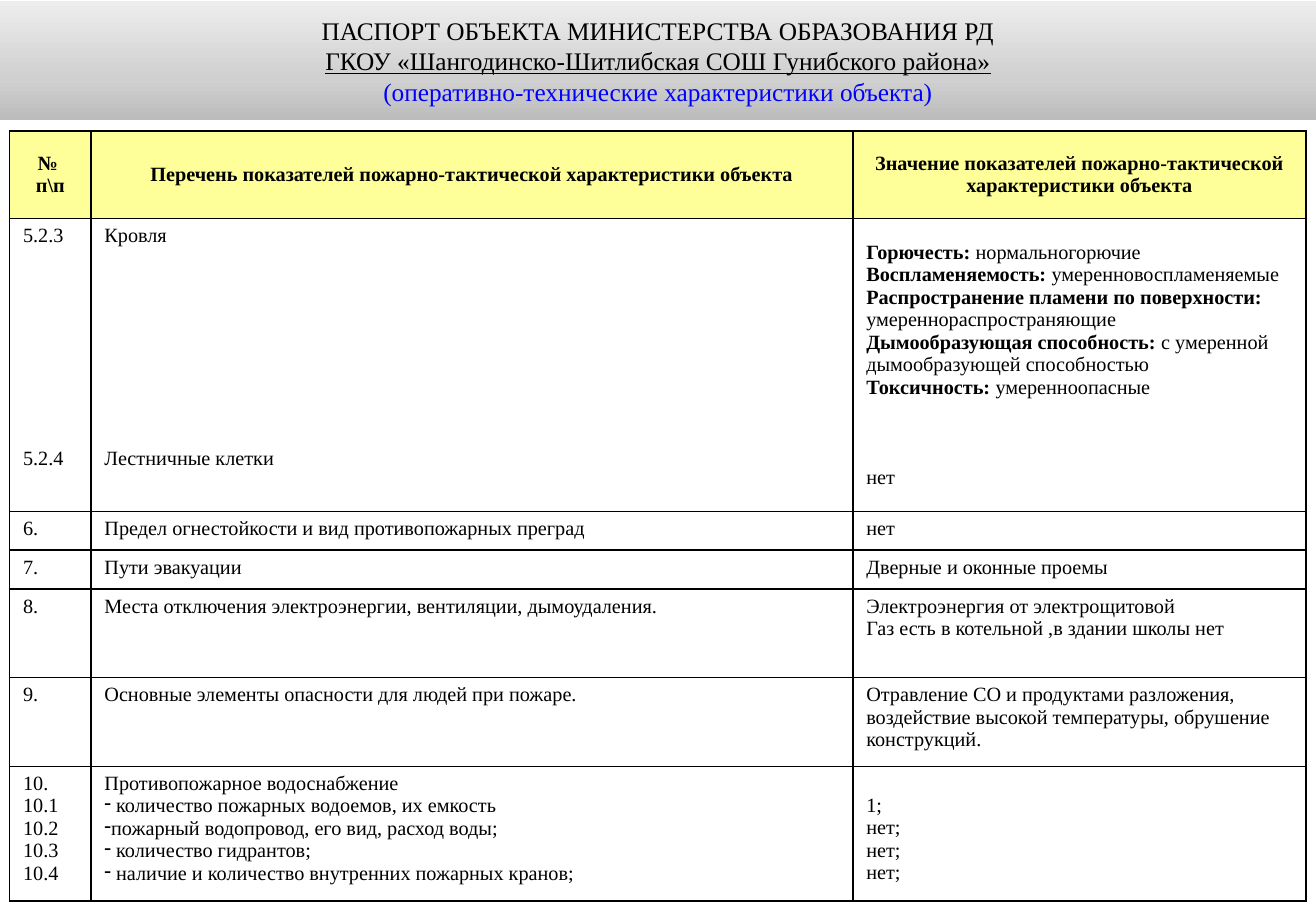
from lxml import etree
from pptx import Presentation
from pptx.dml.color import RGBColor
from pptx.enum.text import MSO_ANCHOR, PP_ALIGN
from pptx.oxml.ns import qn
from pptx.util import Inches, Pt

CENTER, LEFT = PP_ALIGN.CENTER, PP_ALIGN.LEFT
MIDDLE, TOP = MSO_ANCHOR.MIDDLE, MSO_ANCHOR.TOP

COLORS = {"text": "000000", "accent": "0000FF", "header": "FFFF99", "cell": "FFFFFF",
          "border": "000000", "dark": "BCBCBC", "mid": "D0D0D0", "light": "EDEDED"}

COLS = [0.67, 6.27, 3.73]
ROWS = [0.72, 2.41, 0.32, 0.32, 0.73, 0.73, 1.11]

# A line is a string or a list of (text, bold) runs
TABLE = [
    [["№ ", "п\\п"],
     ["Перечень показателей пожарно-тактической характеристики объекта"],
     ["Значение показателей пожарно-тактической характеристики объекта"]],
    [["5.2.3", "5.2.4"],
     ["Кровля", "Лестничные клетки"],
     [[("Горючесть: ", True), ("нормальногорючие", False)],
      [("Воспламеняемость: ", True), ("умеренновоспламеняемые", False)],
      [("Распространение пламени по поверхности:", True)],
      "умереннораспространяющие",
      [("Дымообразующая способность: ", True),
       ("с умеренной дымообразующей способностью", False)],
      [("Токсичность: ", True), ("умеренноопасные", False)],
      "нет"]],
    [["6."], ["Предел огнестойкости и вид противопожарных преград"], ["нет"]],
    [["7."], ["Пути эвакуации"], ["Дверные и оконные проемы"]],
    [["8."], ["Места отключения электроэнергии, вентиляции, дымоудаления."],
     ["Электроэнергия от электрощитовой", "Газ есть в котельной ,в здании школы нет"]],
    [["9."], ["Основные элементы опасности для людей при пожаре."],
     ["Отравление СО и продуктами разложения, воздействие высокой температуры, "
      "обрушение конструкций."]],
    [["10.", "10.1", "10.2", "10.3", "10.4"],
     ["Противопожарное водоснабжение",
      " количество пожарных водоемов, их емкость",
      "пожарный водопровод, его вид, расход воды;",
      " количество гидрантов;",
      " наличие и количество внутренних пожарных кранов;"],
     ["1;", "нет;", "нет;", "нет;"]],
]


class Deck:
    font = "Times New Roman"

    def __init__(self, width, height):
        self.prs = Presentation()
        self.prs.slide_width, self.prs.slide_height = Inches(width), Inches(height)
        self.s = self.prs.slides.add_slide(self.prs.slide_layouts[5])

    def style(self, r, size, color="text", bold=False, underline=False):
        r.font.name, r.font.size = self.font, Pt(size)
        r.font.bold, r.font.underline = bold, underline
        r.font.color.rgb = RGBColor.from_string(COLORS[color])

    def solid(self, parent, color):
        fill = etree.SubElement(parent, qn("a:solidFill"))
        etree.SubElement(fill, qn("a:srgbClr"), val=COLORS[color])

    def title(self, box, lines, size):
        sp = self.s.shapes.title
        sp.left, sp.top, sp.width, sp.height = map(Inches, box)
        grad = etree.SubElement(sp._element.spPr, qn("a:gradFill"), rotWithShape="1")
        stops = etree.SubElement(grad, qn("a:gsLst"))
        for pos, color in ((0, "dark"), (35, "mid"), (100, "light")):
            gs = etree.SubElement(stops, qn("a:gs"), pos=str(pos * 1000))
            etree.SubElement(gs, qn("a:srgbClr"), val=COLORS[color])
        etree.SubElement(grad, qn("a:lin"), ang=str(270 * 60000), scaled="1")
        tf = sp.text_frame
        tf.text = "\n".join(text for text, _, _ in lines)
        tf.word_wrap, tf.vertical_anchor = True, MIDDLE
        for p, (_, color, underline) in zip(tf.paragraphs, lines):
            p.alignment = CENTER
            self.style(p.runs[0], size, color, underline=underline)

    def cell(self, cell, lines, header):
        cell.margin_left = cell.margin_right = Inches(0.11)
        cell.margin_top = cell.margin_bottom = Inches(0.05)
        cell.vertical_anchor = MIDDLE if header else TOP
        # Borders come before the fill in the cell properties
        tcPr = cell._tc.get_or_add_tcPr()
        for side in ("lnL", "lnR", "lnT", "lnB"):
            ln = etree.SubElement(tcPr, qn("a:" + side), w=str(Pt(1)))
            self.solid(ln, "border")
        cell.fill.solid()
        cell.fill.fore_color.rgb = RGBColor.from_string(COLORS["header" if header else "cell"])
        tf = cell.text_frame
        for i, line in enumerate(lines):
            p = tf.paragraphs[0] if i == 0 else tf.add_paragraph()
            p.alignment = CENTER if header else LEFT
            for text, bold in [(line, header)] if isinstance(line, str) else line:
                r = p.add_run()
                r.text = text
                self.style(r, 12, bold=bold)

    def table(self, box, rows):
        frame = self.s.shapes.add_table(len(ROWS), len(COLS), *map(Inches, box))
        tbl = frame.table
        for col, width in zip(tbl.columns, COLS):
            col.width = Inches(width)
        for i, (row, height) in enumerate(zip(tbl.rows, ROWS)):
            row.height = Inches(height)
            for cell, lines in zip(row.cells, rows[i]):
                self.cell(cell, lines, i == 0)
        return tbl

    def dashes(self, paragraphs):
        for p in paragraphs:
            etree.SubElement(p._p.get_or_add_pPr(), qn("a:buChar"), char="-")


def main():
    deck = Deck(10.83, 7.5)

    # Heading band
    deck.title((0, 0.01, 10.83, 0.98), [
        ("ПАСПОРТ ОБЪЕКТА МИНИСТЕРСТВА ОБРАЗОВАНИЯ РД", "text", False),
        ("ГКОУ «Шангодинско-Шитлибская СОШ Гунибского района»", "text", True),
        ("(оперативно-технические характеристики объекта)", "accent", False)], 15)

    # Characteristics table
    tbl = deck.table((0.08, 1.08, 10.67, 6.35), TABLE)

    # Roof and stairwell entries are set apart within one row
    for col, gap in enumerate((119, 119, 40)):
        tbl.cell(1, col).text_frame.paragraphs[-1].space_before = Pt(gap)
    tbl.cell(1, 2).vertical_anchor = MIDDLE

    # Water supply: dashed list, values start at its second line
    deck.dashes(tbl.cell(6, 1).text_frame.paragraphs[1:])
    tbl.cell(6, 2).margin_top = Inches(0.23)

    deck.prs.save("out.pptx")


if __name__ == "__main__":
    main()
